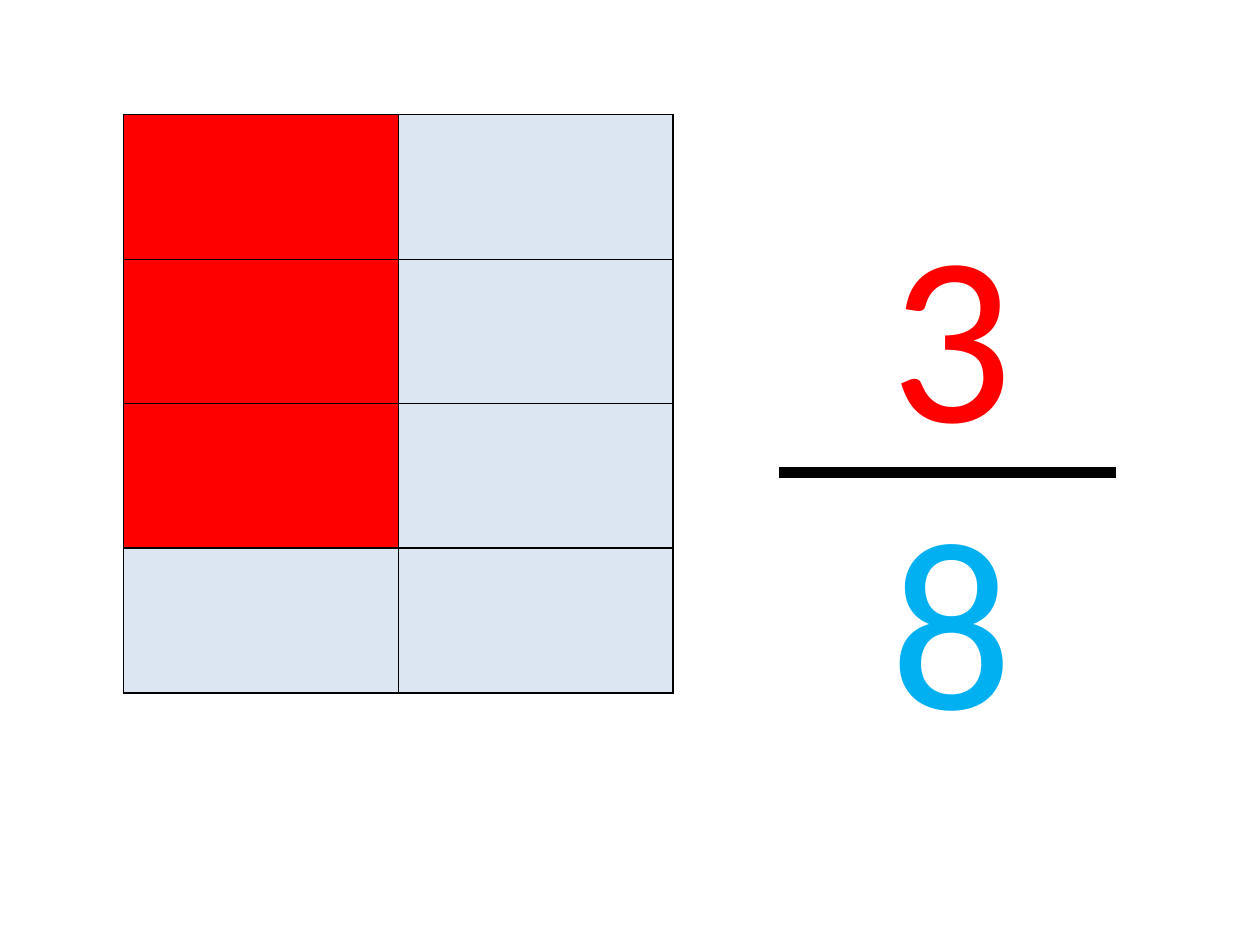
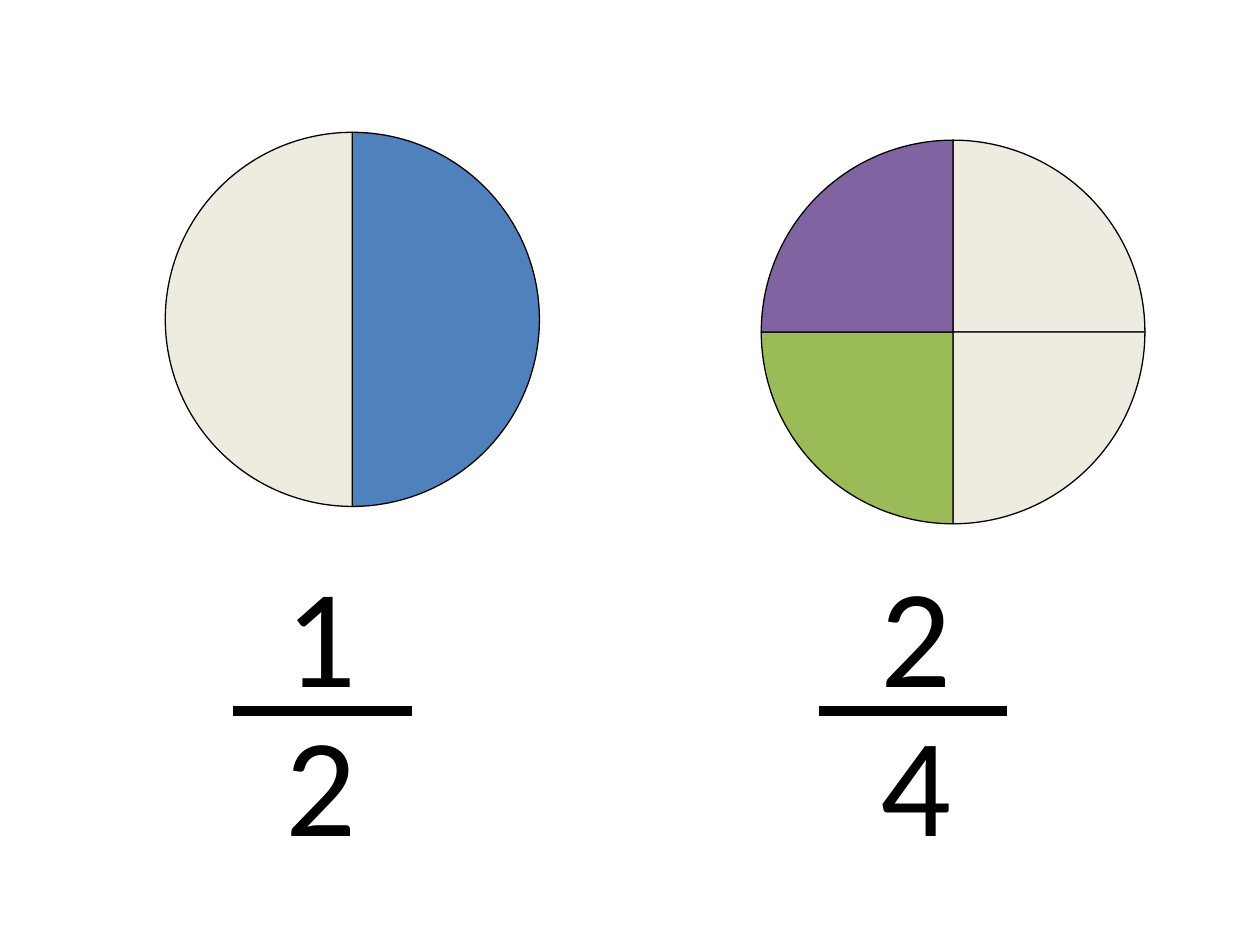
from dataclasses import dataclass

from lxml import etree
from pptx import Presentation
from pptx import util as u
from pptx.chart import data as cd
from pptx.dml.color import RGBColor
from pptx.enum import chart as ch
from pptx.enum import shapes, text
from pptx.oxml import parse_xml
from pptx.oxml.ns import nsdecls, qn


@dataclass(frozen=True)
class Theme:
    font: str = "Calibri"
    ink: str = "000000"
    red: str = "FF0000"
    sky: str = "00B0F0"
    pale: str = "DCE6F2"
    cream: str = "EEECE1"
    blue: str = "4F81BD"
    green: str = "9BBB59"
    plum: str = "8064A2"
    huge: int = 138
    big: int = 80
    small: int = 10
    bar: float = 6
    rim: float = 0.75
    grid: float = 1


T = Theme()


@dataclass(frozen=True)
class Digit:
    value: str
    top: float
    width: float
    color: str = T.ink


@dataclass(frozen=True)
class Ratio:
    """A fraction: two digits and the bar between them, in cm."""
    over: Digit
    under: Digit
    left: float
    height: float
    size: int
    start: float
    end: float
    level: float


@dataclass(frozen=True)
class Pie:
    left: float
    top: float
    width: float
    height: float
    fills: tuple[str, ...]


@dataclass(frozen=True)
class Grid:
    top: float
    fills: tuple[tuple[str, str], ...]


# Slide content
GRIDS = (
    Grid(2.31, ((T.red, T.pale), (T.red, T.pale))),
    Grid(8.13, ((T.red, T.pale), (T.pale, T.pale))),
)
GRID_LEFT, CELL_W, CELL_H = 2.49, 5.54, 2.92

EIGHTHS = Ratio(Digit("3", 3.53, 5.59, T.red), Digit("8", 9.32, 5.59, T.sky),
                17.7, 6.15, T.huge, 15.7, 22.5, 9.53)


def small_ratio(over: str, under: str, wide: float, left: float,
                start: float, end: float) -> Ratio:
    return Ratio(Digit(over, 10.92, wide), Digit(under, 13.92, 2.21),
                 left, 3.68, T.big, start, end, 14.33)


PAIRS = (
    (Pie(2.9, 2.34, 8.41, 8.2, (T.blue, T.cream)),
     small_ratio("1", "2", 3.2, 5.51, 4.7, 8.31)),
    (Pie(14.91, 2.49, 8.61, 8.41, (T.cream, T.cream, T.green, T.plum)),
     small_ratio("2", "4", 2.39, 17.5, 16.51, 20.29)),
)


def rgb(code: str) -> RGBColor:
    return RGBColor.from_string(code)


# Fractions
def draw_digit(slide, digit: Digit, ratio: Ratio) -> None:
    box = slide.shapes.add_textbox(u.Cm(ratio.left), u.Cm(digit.top),
                                   u.Cm(digit.width), u.Cm(ratio.height))
    frame = box.text_frame
    frame.word_wrap = True
    frame.auto_size = text.MSO_AUTO_SIZE.SHAPE_TO_FIT_TEXT
    run = frame.paragraphs[0].add_run()
    run.text = digit.value
    run.font.name = T.font
    run.font.size = u.Pt(ratio.size)
    run.font.color.rgb = rgb(digit.color)


def draw_ratio(slide, ratio: Ratio) -> None:
    level = u.Cm(ratio.level)
    bar = slide.shapes.add_connector(shapes.MSO_CONNECTOR.STRAIGHT,
                                     u.Cm(ratio.start), level,
                                     u.Cm(ratio.end), level)
    bar.line.color.rgb = rgb(T.ink)
    bar.line.width = u.Pt(T.bar)
    etree.SubElement(bar._element.spPr, qn("a:effectLst"))
    for digit in (ratio.over, ratio.under):
        draw_digit(slide, digit, ratio)


# Shaded grid
def edge_cell(cell) -> None:
    props = cell._tc.get_or_add_tcPr()
    for spot, side in enumerate(("lnL", "lnR", "lnT", "lnB")):
        props.insert(spot, parse_xml(
            f'<a:{side} {nsdecls("a")} w="{u.Pt(T.grid)}"><a:solidFill>'
            f'<a:srgbClr val="{T.ink}"/></a:solidFill></a:{side}>'))


def draw_grid(slide, grid: Grid) -> None:
    rows, cols = len(grid.fills), len(grid.fills[0])
    table = slide.shapes.add_table(
        rows, cols, u.Cm(GRID_LEFT), u.Cm(grid.top),
        u.Cm(CELL_W * cols), u.Cm(CELL_H * rows)).table
    table.first_row = table.horz_banding = False
    for r, fills in enumerate(grid.fills):
        for c, code in enumerate(fills):
            cell = table.cell(r, c)
            cell.fill.solid()
            cell.fill.fore_color.rgb = rgb(code)
            edge_cell(cell)


# Pie charts
def draw_pie(slide, pie: Pie) -> None:
    count = len(pie.fills)
    data = cd.CategoryChartData()
    data.categories = [str(n + 1) for n in range(count)]
    data.add_series("Series 1", [100 // count] * count)
    chart = slide.shapes.add_chart(
        ch.XL_CHART_TYPE.PIE, u.Cm(pie.left), u.Cm(pie.top),
        u.Cm(pie.width), u.Cm(pie.height), data).chart
    chart.has_legend = chart.has_title = False
    chart.font.name = T.font
    chart.font.size = u.Pt(T.small)
    chart.font.color.rgb = rgb(T.ink)
    plot = chart.plots[0]
    plot.vary_by_categories = True
    for n, code in enumerate(pie.fills):
        part = plot.series[0].points[n].format
        part.fill.solid()
        part.fill.fore_color.rgb = rgb(code)
        part.line.color.rgb = rgb(T.ink)
        part.line.width = u.Pt(T.rim)
    place_plot(chart)


def place_plot(chart) -> None:
    """Let the circle nearly fill its frame."""
    area = chart._chartSpace.chart.plotArea
    for old in area.findall(qn("c:layout")):
        area.remove(old)
    parts = (("layoutTarget", "inner"), ("xMode", "edge"), ("yMode", "edge"),
             ("x", 0.05), ("y", 0.04), ("w", 0.9), ("h", 0.92))
    inner = "".join(f'<c:{tag} val="{val}"/>' for tag, val in parts)
    area.insert(0, parse_xml(
        f'<c:layout {nsdecls("c")}><c:manualLayout>{inner}'
        f'</c:manualLayout></c:layout>'))


def main() -> None:
    deck = Presentation()
    deck.slide_width, deck.slide_height = u.Cm(25.4), u.Cm(19.05)
    blank = deck.slide_layouts[6]

    # Slide 1: three eighths
    slide = deck.slides.add_slide(blank)
    for grid in GRIDS:
        draw_grid(slide, grid)
    draw_ratio(slide, EIGHTHS)

    # Slide 2: one half and two quarters
    slide = deck.slides.add_slide(blank)
    for pie, ratio in PAIRS:
        draw_pie(slide, pie)
        draw_ratio(slide, ratio)

    deck.save("out.pptx")


if __name__ == "__main__":
    main()
